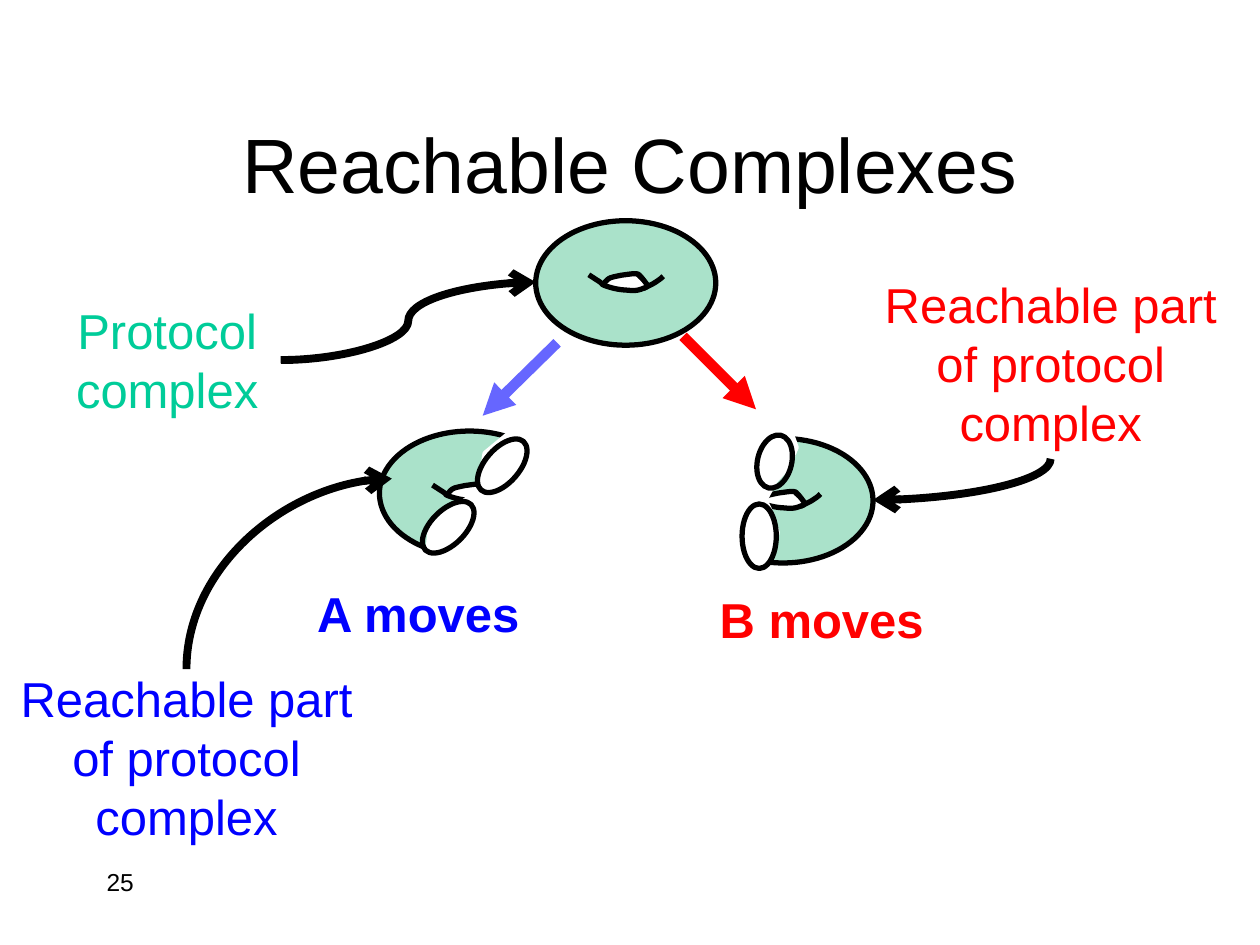
from lxml import etree
from pptx import Presentation
from pptx import util as u
from pptx.dml.color import RGBColor
from pptx.enum import shapes, text
from pptx.oxml.ns import qn

COLORS = {
    "black": "000000", "white": "FFFFFF", "mint": "AAE2CA", "green": "00CC99",
    "red": "FF0000", "blue": "0000FF", "violet": "6666FF",
}
ALIGN = text.PP_ALIGN

# Outlines of the torus opening, in cm from the torus corner
HOLE = [(1.37, 1.3), (1.47, 1.35), (1.55, 1.37), (1.65, 1.4), (1.9, 1.42),
        (2.26, 1.37), (2.06, 1.14), (1.96, 1.09), (1.52, 1.14), (1.4, 1.19)]
UPPER_RIM = [(1.35, 1.3), (1.47, 1.17), (1.63, 1.12), (1.8, 1.09),
             (2.03, 1.07), (2.13, 1.14), (2.29, 1.35)]
LOWER_RIM = [(1.07, 1.09), (1.3, 1.24), (1.37, 1.3), (1.6, 1.37), (1.83, 1.4),
             (2.06, 1.4), (2.31, 1.3), (2.49, 1.19), (2.57, 1.12)]

# White areas that cut away the unreachable part of a torus
CUT_A = [(10.24, 8.76), (9.78, 9.14), (9.7, 9.63), (9.7, 9.86), (9.35, 10.11),
         (8.99, 10.26), (8.69, 10.54), (8.64, 11), (8.64, 11.18),
         (10.36, 11.61), (12.4, 10.24), (11.05, 8.81)]
CUT_B = [(15.44, 11.3), (15.67, 10.74), (15.52, 10.29), (15.42, 10.08),
         (15.62, 9.7), (15.88, 9.42), (16.05, 9.02), (15.9, 8.59),
         (15.8, 8.41), (14.07, 8.81), (12.85, 10.95), (14.71, 11.61)]


def rgb(name):
    return RGBColor.from_string(COLORS[name])


def smooth(points, steps=4):
    """Return points on a Catmull-Rom curve through the given ones."""
    ends = [points[0], *points, points[-1]]
    curve = [points[0]]
    for a, b, c, d in zip(ends, ends[1:], ends[2:], ends[3:]):
        for i in range(1, steps + 1):
            t = i / steps
            curve.append(tuple(
                q + t * ((r - p) + t * ((2 * p - 5 * q + 4 * r - s)
                                        + t * (3 * q - p - 3 * r + s))) / 2
                for p, q, r, s in zip(a, b, c, d)))
    return curve


class Deck:
    font = "Arial"
    outline = 3
    torus_size = (3.63, 2.51)

    def __init__(self, width, height):
        self.prs = Presentation()
        self.prs.slide_width, self.prs.slide_height = u.Cm(width), u.Cm(height)
        self.s = self.prs.slides.add_slide(self.prs.slide_layouts[6])

    def label(self, words, box, size=28, color="black", align=ALIGN.CENTER,
              bold=False, wrap=True, anchor=text.MSO_ANCHOR.TOP):
        sp = self.s.shapes.add_textbox(*map(u.Cm, box))
        tf = sp.text_frame
        tf.word_wrap, tf.vertical_anchor = wrap, anchor
        p = tf.paragraphs[0]
        p.alignment = align
        r = p.add_run()
        r.text = words
        r.font.name, r.font.size, r.font.bold = self.font, u.Pt(size), bold
        r.font.color.rgb = rgb(color)

    def paint(self, sp, fill, line, width):
        sp.shadow.inherit = False
        if fill:
            sp.fill.solid()
            sp.fill.fore_color.rgb = rgb(fill)
        else:
            sp.fill.background()
        sp.line.color.rgb = rgb(line)
        sp.line.width = u.Pt(width)

    def ellipse(self, box, fill=None, rotation=0):
        sp = self.s.shapes.add_shape(shapes.MSO_SHAPE.OVAL, *map(u.Cm, box))
        sp.rotation = rotation
        self.paint(sp, fill, "black", self.outline)

    def freeform(self, points, fill=None, line="black", width=outline):
        """Draw an outline, closed when it has a fill."""
        pts = [(u.Cm(x), u.Cm(y)) for x, y in points]
        fb = self.s.shapes.build_freeform(*pts[0])
        fb.add_line_segments(pts[1:], close=fill is not None)
        self.paint(fb.convert_to_shape(), fill, line, width)

    def torus(self, left, top):
        self.ellipse((left, top, *self.torus_size), "mint")
        for points, fill, width in ((HOLE, "white", 0.75),
                                    (UPPER_RIM, None, self.outline),
                                    (LOWER_RIM, None, self.outline)):
            placed = [(left + x, top + y) for x, y in points]
            self.freeform(smooth(placed), fill, width=width)

    def arrow(self, start, end, color="black", width=4.5, head="arrow",
              kind=shapes.MSO_CONNECTOR.CURVE):
        cn = self.s.shapes.add_connector(kind, *map(u.Cm, (*start, *end)))
        cn.line.color.rgb = rgb(color)
        cn.line.width = u.Pt(width)
        sp_pr = cn._element.spPr
        etree.SubElement(sp_pr.find(qn("a:ln")), qn("a:tailEnd"), type=head)
        etree.SubElement(sp_pr, qn("a:effectLst"))
        return cn

    def bent_arrow(self, start, end):
        """Draw a quarter curve that leaves vertically and ends level."""
        cx, cy = ((a + b) / 2 for a, b in zip(start, end))
        turned = [(cx + y - cy, cy - x + cx) for x, y in (start, end)]
        sp_pr = self.arrow(*turned)._element.spPr
        sp_pr.find(qn("a:xfrm")).set("rot", str(90 * 60000))
        sp_pr.find(qn("a:prstGeom")).set("prst", "curvedConnector2")


def main():
    d = Deck(25.4, 19.05)
    d.label("25", (1.9, 17.35, 5.28, 1.27), size=14, align=ALIGN.LEFT)
    d.label("Reachable Complexes", (1.9, 1.7, 21.6, 3.18), size=44,
            anchor=text.MSO_ANCHOR.MIDDLE)

    straight = dict(width=6, head="triangle", kind=shapes.MSO_CONNECTOR.STRAIGHT)
    d.arrow((11.23, 6.91), (9.73, 8.38), "violet", **straight)
    d.arrow((13.77, 6.78), (15.24, 8.25), "red", **straight)

    moves = dict(align=ALIGN.RIGHT, bold=True, wrap=False)
    d.label("A moves", (6.07, 11.63, 4.65, 1.45), color="blue", **moves)
    d.label("B moves", (14.2, 11.76, 4.67, 1.45), color="red", **moves)

    d.torus(10.8, 4.45)
    d.label("Protocol complex", (1.07, 5.94, 4.6, 2.64), color="green")
    d.arrow((5.66, 7.26), (10.8, 5.69))

    d.torus(7.65, 8.69)
    d.freeform(CUT_A, "white", "white")
    d.ellipse((8.69, 9.98, 0.69, 1.3), rotation=45)
    d.ellipse((9.78, 8.74, 0.69, 1.3), rotation=41)

    d.torus(13.97, 8.84)
    d.freeform(CUT_B, "white", "white")
    d.ellipse((14.96, 10.16, 0.69, 1.3))
    d.ellipse((15.27, 8.76, 0.69, 1.09), rotation=13.5)

    reachable = "Reachable part of protocol complex"
    d.label(reachable, (17.42, 5.41, 7.52, 3.84), color="red")
    d.bent_arrow((21.18, 9.25), (17.6, 10.08))
    d.label(reachable, (0, 13.36, 7.52, 3.84), color="blue")
    d.bent_arrow((3.76, 13.49), (7.9, 9.65))

    d.prs.save("out.pptx")


if __name__ == "__main__":
    main()
